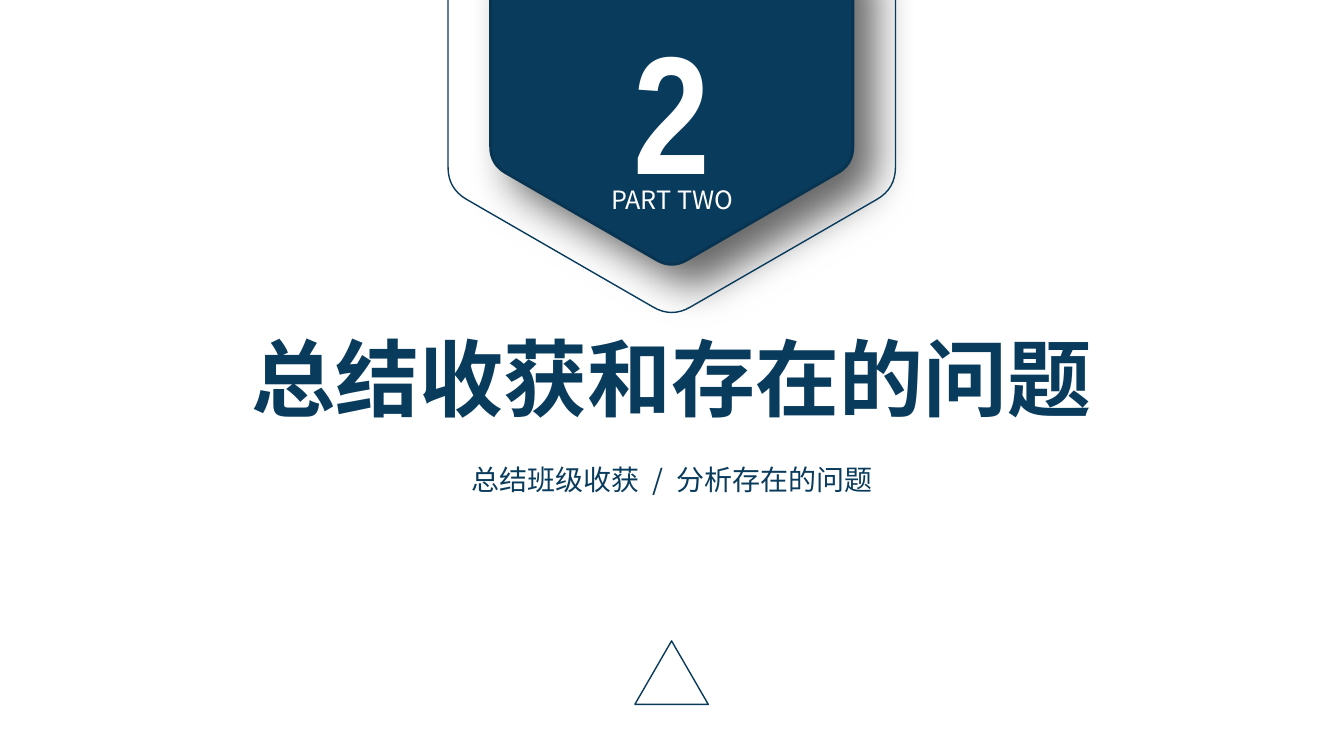
import math
from dataclasses import dataclass

import pptx
import pptx.dml.color
import pptx.enum.shapes
import pptx.enum.text
import pptx.oxml
import pptx.oxml.ns
import pptx.util
from pptx.util import Cm


@dataclass(frozen=True)
class Theme:
    navy: str = "093B5C"
    navy_edge: str = "083451"
    white: str = "FFFFFF"
    shadow: str = "000000"
    body_font: str = "Noto Sans CJK SC"
    number_font: str = "Arial Narrow"
    number_size: int = 120
    title_size: int = 60
    subtitle_size: int = 20
    part_size: int = 18


def rgb(code):
    return pptx.dml.color.RGBColor.from_string(code)


def rounded_hexagon(center_x, center_y, radius, rounding=0.083, steps=8):
    """Points of a regular hexagon with a corner on top and softened corners."""
    corners = [(center_x + radius * math.sin(math.radians(60 * i)),
                center_y - radius * math.cos(math.radians(60 * i))) for i in range(6)]
    points = []
    for i, corner in enumerate(corners):
        before, after = corners[i - 1], corners[(i + 1) % 6]
        start, end = [[c + rounding * (n - c) for c, n in zip(corner, neighbour)]
                      for neighbour in (before, after)]
        for step in range(steps + 1):
            t = step / steps
            points.append(tuple(Cm((1 - t) ** 2 * s + 2 * t * (1 - t) * c + t ** 2 * e)
                                for s, c, e in zip(start, corner, end)))
    return points


class SlideBuilder:
    def __init__(self, presentation, theme):
        self.theme = theme
        self.slide = presentation.slides.add_slide(presentation.slide_layouts[5])

    def set_text(self, holder, runs, size, color, font=None, bold=False):
        """Fill a text holder with centred runs of (text, letter spacing in points)."""
        frame = holder.text_frame
        frame.word_wrap = True
        frame.auto_size = pptx.enum.text.MSO_AUTO_SIZE.NONE
        frame.vertical_anchor = pptx.enum.text.MSO_ANCHOR.TOP
        paragraph = frame.paragraphs[0]
        paragraph.alignment = pptx.enum.text.PP_ALIGN.CENTER
        for text, spacing in runs:
            run = paragraph.add_run()
            run.text = text
            run.font.size = pptx.util.Pt(size)
            run.font.bold = bold
            run.font.color.rgb = rgb(color)
            run.font.name = font or self.theme.body_font
            properties = run.font._element
            east_asian = pptx.oxml.parse_xml(
                f'<a:ea {pptx.oxml.ns.nsdecls("a")} typeface="{run.font.name}"/>')
            properties.append(east_asian)
            if spacing:
                properties.set("spc", str(int(spacing * 100)))

    def title(self, text, left, top, width, height):
        title = self.slide.shapes.title
        title.left, title.top, title.width, title.height = map(Cm, (left, top, width, height))
        self.set_text(title, [(text, 0)], self.theme.title_size, self.theme.navy, bold=True)

    def text(self, runs, left, top, width, height, size, color, **style):
        box = self.slide.shapes.add_textbox(*map(Cm, (left, top, width, height)))
        self.set_text(box, runs, size, color, **style)

    def finish(self, shape, line, line_width, fill=None):
        shape.shadow.inherit = False
        shape.line.color.rgb = rgb(line)
        shape.line.width = pptx.util.Pt(line_width)
        if fill:
            shape.fill.solid()
            shape.fill.fore_color.rgb = rgb(fill)
        else:
            shape.fill.background()

    def hexagon(self, center_x, center_y, radius, **style):
        first, *others = rounded_hexagon(center_x, center_y, radius)
        outline = self.slide.shapes.build_freeform(*first)
        outline.add_line_segments(others, close=True)
        badge = outline.convert_to_shape()
        self.finish(badge, **style)
        return badge

    def cast_shadow(self, shape, opacity, blur, distance, angle):
        effects = shape._element.spPr.find(pptx.oxml.ns.qn("a:effectLst"))
        effects.append(pptx.oxml.parse_xml(
            f'<a:outerShdw {pptx.oxml.ns.nsdecls("a")} blurRad="{pptx.util.Pt(blur)}" '
            f'dist="{pptx.util.Pt(distance)}" dir="{angle * 60000}" algn="tl" rotWithShape="0">'
            f'<a:srgbClr val="{self.theme.shadow}"><a:alpha val="{opacity * 1000}"/>'
            f'</a:srgbClr></a:outerShdw>'))

    def triangle(self, left, top, width, height, **style):
        kind = pptx.enum.shapes.MSO_SHAPE.ISOSCELES_TRIANGLE
        marker = self.slide.shapes.add_shape(kind, *map(Cm, (left, top, width, height)))
        self.finish(marker, **style)


def main():
    theme = Theme()
    presentation = pptx.Presentation()
    presentation.slide_width, presentation.slide_height = Cm(33.87), Cm(19.05)
    section = SlideBuilder(presentation, theme)

    # Section title and subtitle
    section.title("总结收获和存在的问题", 5.26, 8.1, 23.34, 5.38)
    section.text([("总结班级收获", 0), (" ", 4.5), ("/", 0), (" ", 4.5), ("分析存在的问题", 0)],
                 7.44, 11.53, 19, 1.12, theme.subtitle_size, theme.navy)

    # Hexagonal badge hanging from the top edge
    badge = section.hexagon(16.93, 1.5, 5.27, fill=theme.navy,
                            line=theme.navy_edge, line_width=2)
    section.cast_shadow(badge, opacity=60, blur=30, distance=20, angle=45)
    section.hexagon(16.93, 1.5, 6.51, line=theme.navy, line_width=1)

    # Section number
    section.text([("2", 0)], 15.06, 0.05, 3.73, 5.38, theme.number_size, theme.white,
                 font=theme.number_font, bold=True)
    section.text([("PART TWO", 0)], 14.38, 4.52, 5.11, 1.02, theme.part_size, theme.white)

    # Triangle at the foot
    section.triangle(16, 16.15, 1.85, 1.6, line=theme.navy, line_width=1)

    presentation.save("out.pptx")


if __name__ == "__main__":
    main()
